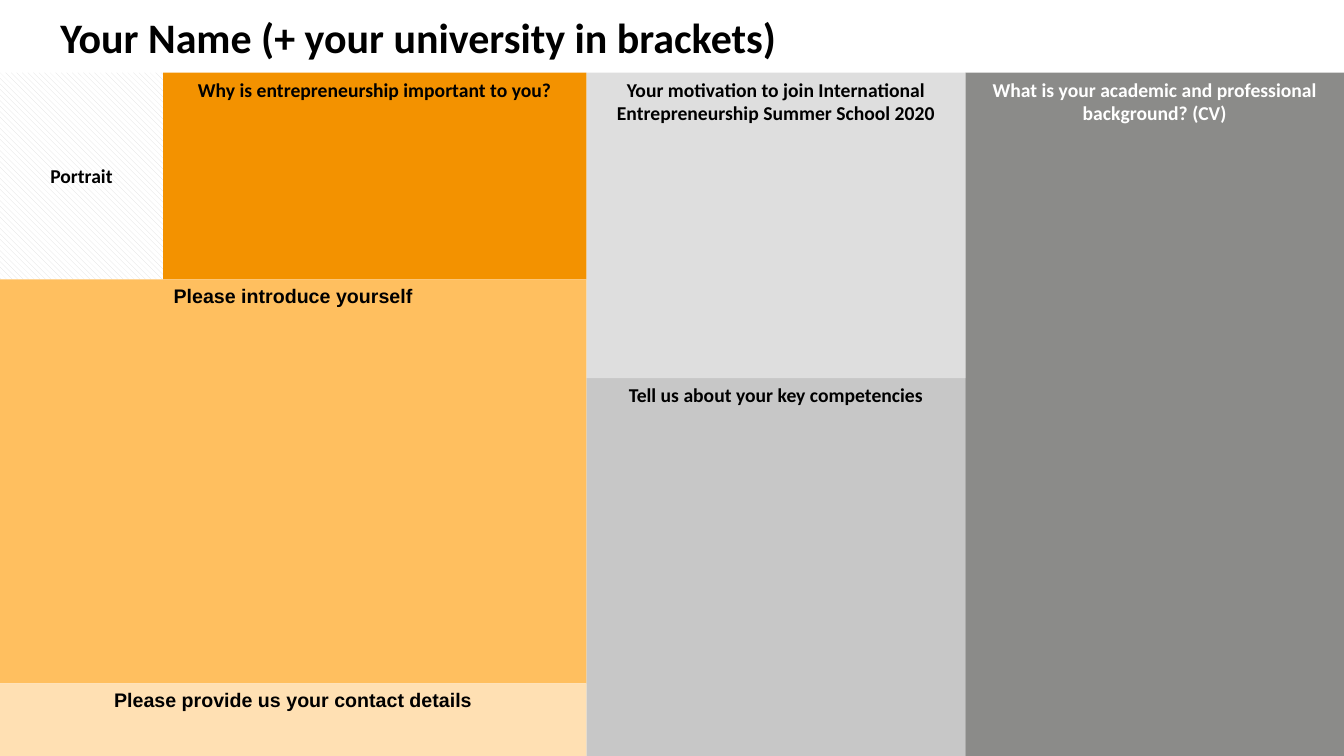
from pptx import Presentation
from pptx.dml.color import RGBColor as RGB
from pptx.enum.dml import MSO_PATTERN
from pptx.enum.shapes import MSO_SHAPE
from pptx.enum.text import MSO_ANCHOR as ANCHOR, PP_ALIGN as ALIGN
from pptx.util import Cm, Pt

# Colours
BLACK = RGB(0x00, 0x00, 0x00)
WHITE = RGB(0xFF, 0xFF, 0xFF)
ORANGE = RGB(0xF3, 0x92, 0x00)
AMBER = RGB(0xFF, 0xBF, 0x5F)
CREAM = RGB(0xFF, 0xE0, 0xB3)
LIGHT_GREY = RGB(0xDE, 0xDE, 0xDE)
MID_GREY = RGB(0xC7, 0xC7, 0xC7)
DARK_GREY = RGB(0x8B, 0x8B, 0x89)

# Grid lines in cm
LEFT, PORTRAIT_END, MIDDLE, TITLE_END, CV, RIGHT = 0, 4.11, 14.78, 22.15, 24.33, 33.87
TOP, HEADER, INTRO, SKILLS, CONTACT, BOTTOM = 0, 1.83, 7.04, 9.53, 17.22, 19.05

# Panels: text, (left, top, right, bottom), fill, differences from the usual format
TITLE = {"size": 30, "align": ALIGN.LEFT, "anchor": ANCHOR.MIDDLE}
PANELS = [
    ("\tYour Name (+ your university in brackets)",
     (LEFT, TOP, TITLE_END, HEADER), WHITE, TITLE),
    ("Portrait", (LEFT, HEADER, PORTRAIT_END, INTRO), None, {"anchor": ANCHOR.MIDDLE}),
    ("Tell us about your key competencies", (MIDDLE, SKILLS, CV, BOTTOM), MID_GREY, {}),
    ("What is your academic and professional background? (CV)",
     (CV, HEADER, RIGHT, BOTTOM), DARK_GREY, {"color": WHITE}),
    ("Your motivation to join International Entrepreneurship Summer School 2020",
     (MIDDLE, HEADER, CV, SKILLS), LIGHT_GREY, {}),
    ("Why is entrepreneurship important to you?",
     (PORTRAIT_END, HEADER, MIDDLE, INTRO), ORANGE, {}),
    ("Please introduce yourself", (LEFT, INTRO, MIDDLE, CONTACT), AMBER, {"font": "Arial"}),
    ("Please provide us your contact details",
     (LEFT, CONTACT, MIDDLE, BOTTOM), CREAM, {"font": "Arial"}),
]
USUAL = {"size": 14, "font": "Calibri", "color": BLACK,
         "align": ALIGN.CENTER, "anchor": ANCHOR.TOP}


def paint(fill, color):
    """Solid colour, or the hatching of the portrait field when there is none."""
    if color is None:
        fill.patterned()
        fill.pattern = MSO_PATTERN.WIDE_DOWNWARD_DIAGONAL
        fill.fore_color.rgb, fill.back_color.rgb = LIGHT_GREY, WHITE
    else:
        fill.solid()
        fill.fore_color.rgb = color


def add_panel(s, text, box, color, changes):
    fmt = {**USUAL, **changes}
    x1, y1, x2, y2 = box
    sp = s.shapes.add_shape(MSO_SHAPE.RECTANGLE, Cm(x1), Cm(y1), Cm(x2 - x1), Cm(y2 - y1))
    sp.shadow.inherit = False
    sp.line.fill.background()
    paint(sp.fill, color)

    tf = sp.text_frame
    tf.word_wrap = True
    tf.vertical_anchor = fmt["anchor"]
    p = tf.paragraphs[0]
    p.alignment = fmt["align"]
    r = p.add_run()
    r.text = text
    for name, value in {"size": Pt(fmt["size"]), "name": fmt["font"], "bold": True}.items():
        setattr(r.font, name, value)
    r.font.color.rgb = fmt["color"]


def main():
    prs = Presentation()
    prs.slide_width, prs.slide_height = Cm(RIGHT), Cm(BOTTOM)
    s = prs.slides.add_slide(prs.slide_layouts[6])
    for panel in PANELS:
        add_panel(s, *panel)
    prs.save("out.pptx")


if __name__ == "__main__":
    main()
